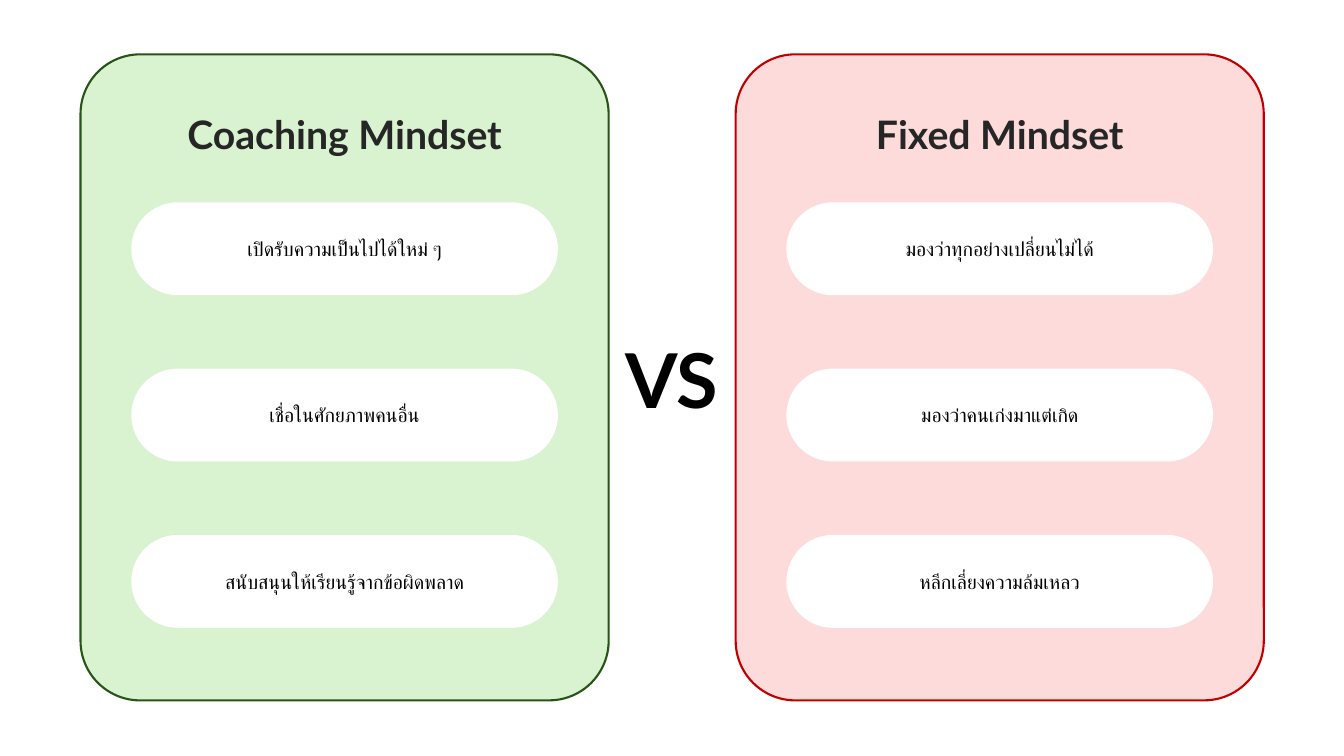
from pptx import Presentation
from pptx.dml.color import RGBColor
from pptx.enum import shapes, text
from pptx.util import Cm, Pt

MINDSETS = [
    ("Coaching Mindset", "D9F2D0", "275417",
     ["เปิดรับความเป็นไปได้ใหม่ ๆ", "เชื่อในศักยภาพคนอื่น", "สนับสนุนให้เรียนรู้จากข้อผิดพลาด"]),
    ("Fixed Mindset", "FDDBDB", "C00000",
     ["มองว่าทุกอย่างเปลี่ยนไม่ได้", "มองว่าคนเก่งมาแต่เกิด", "หลีกเลี่ยงความล้มเหลว"]),
]
PANEL_LEFT, PANEL_TOP, PANEL_WIDTH, PANEL_HEIGHT = 2.03, 1.37, 13.31, 16.28
PANEL_STEP = 16.51
BELIEF_MARGIN, BELIEF_TOP, BELIEF_STEP, BELIEF_HEIGHT = 1.28, 3.73, 4.19, 2.34


def color(hex_string):
    return RGBColor.from_string(hex_string)


def write(shape, words, size, hex_color, bold=False):
    """Fill a shape with one centred line of Lato."""
    shape.text_frame.text = words
    line = shape.text_frame.paragraphs[0]
    line.alignment = text.PP_ALIGN.CENTER
    font = line.runs[0].font
    font.name, font.size, font.bold = "Lato", Pt(size), bold
    font.color.rgb = color(hex_color)


def rounded_box(slide, left, top, width, height, roundness, fill, outline=None):
    box = slide.shapes.add_shape(shapes.MSO_SHAPE.ROUNDED_RECTANGLE,
                                 Cm(left), Cm(top), Cm(width), Cm(height))
    box.adjustments[0] = roundness
    box.shadow.inherit = False
    box.fill.solid()
    box.fill.fore_color.rgb = color(fill)
    if outline:
        box.line.color.rgb = color(outline)
        box.line.width = Pt(1.5)
    else:
        box.line.fill.background()
    return box


def mindset_panel(slide, left, top, width, height, mindset):
    """Draw a headed panel with its beliefs stacked as pills."""
    heading, fill, outline, beliefs = mindset
    panel = rounded_box(slide, left, top, width, height, 0.113, fill, outline)
    panel.text_frame.vertical_anchor = text.MSO_ANCHOR.TOP
    panel.text_frame.margin_top = Cm(0.97)
    write(panel, heading, 28, "262626", bold=True)

    for row, belief in enumerate(beliefs):
        pill = rounded_box(slide, left + BELIEF_MARGIN, top + BELIEF_TOP + row * BELIEF_STEP,
                           width - 2 * BELIEF_MARGIN, BELIEF_HEIGHT, 0.5, "FFFFFF")
        pill.text_frame.vertical_anchor = text.MSO_ANCHOR.MIDDLE
        write(pill, belief, 14, "000000")


def versus(slide, left, top, width, height):
    label = slide.shapes.add_textbox(Cm(left), Cm(top), Cm(width), Cm(height))
    label.text_frame.word_wrap = True
    label.text_frame.auto_size = text.MSO_AUTO_SIZE.SHAPE_TO_FIT_TEXT
    write(label, "VS", 54, "000000", bold=True)


def main():
    deck = Presentation()
    deck.slide_width, deck.slide_height = Cm(33.87), Cm(19.05)
    slide = deck.slides.add_slide(deck.slide_layouts[6])
    for column, mindset in enumerate(MINDSETS):
        mindset_panel(slide, PANEL_LEFT + column * PANEL_STEP, PANEL_TOP,
                      PANEL_WIDTH, PANEL_HEIGHT, mindset)
    versus(slide, 15.24, 8.26, 3.4, 2.57)
    deck.save("out.pptx")


if __name__ == "__main__":
    main()
